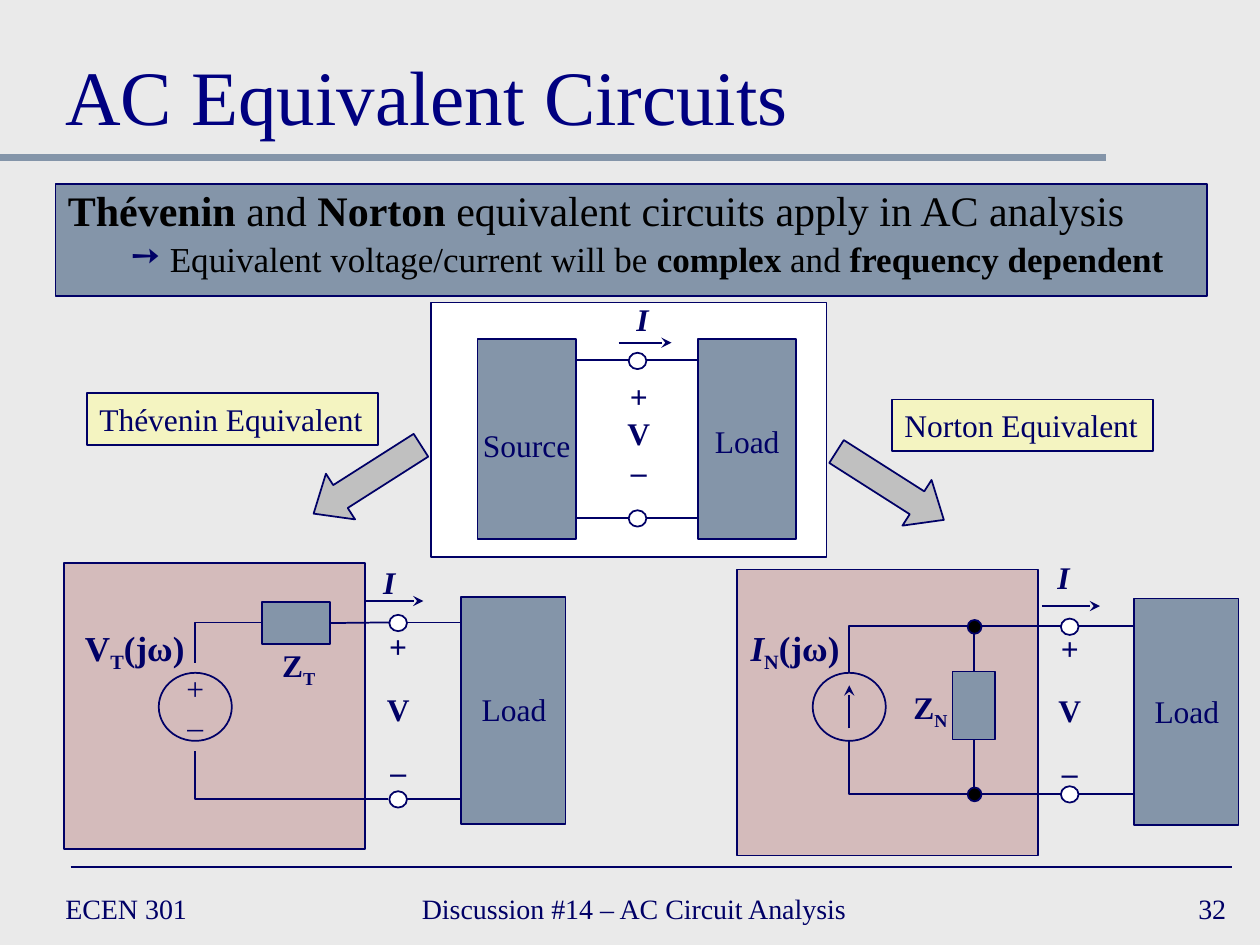
from lxml.etree import SubElement
from pptx import Presentation
from pptx.dml.color import RGBColor
from pptx.enum.shapes import MSO_CONNECTOR, MSO_SHAPE
from pptx.enum.text import MSO_ANCHOR, PP_ALIGN
from pptx.oxml.ns import qn
from pptx.util import Emu, Pt

PX = 9144
FONT = "Times New Roman"
NAVY = RGBColor(0x00, 0x00, 0x66)
TITLE_BLUE = RGBColor(0x00, 0x00, 0x80)
SLATE = RGBColor(0x84, 0x95, 0xA9)
MAROON = RGBColor(0x80, 0x00, 0x00)
YELLOW = RGBColor(0xFF, 0xFF, 0x99)
SILVER = RGBColor(0xC0, 0xC0, 0xC0)
PAPER = RGBColor(0xEA, 0xEA, 0xEA)
WHITE = RGBColor(0xFF, 0xFF, 0xFF)
BLACK = RGBColor(0x00, 0x00, 0x00)


def px(*values):
    return [Emu(value * PX) for value in values]


def write(paragraph, runs, size, color=NAVY, align=PP_ALIGN.LEFT):
    paragraph.alignment = align
    paragraph.font.name = FONT
    paragraph.font.size = Pt(size)
    paragraph.font.color.rgb = color
    all_bold = all("b" in style for _, style in runs)
    if all_bold:
        paragraph.font.bold = True
    for text, style in runs:
        run = paragraph.add_run()
        run.text = text
        if "b" in style and not all_bold:
            run.font.bold = True
        if "i" in style:
            run.font.italic = True
        if "s" in style:
            run.font._element.set("baseline", "-25000")


def add_text(slide, box, runs, size, color=NAVY, align=PP_ALIGN.LEFT, anchor=MSO_ANCHOR.MIDDLE):
    frame = slide.shapes.add_textbox(*px(*box)).text_frame
    frame.word_wrap = True
    frame.vertical_anchor = anchor
    write(frame.paragraphs[0], runs, size, color, align)


def add_label(slide, box, lines, size=18, gap=0):
    frame = slide.shapes.add_textbox(*px(*box)).text_frame
    frame.word_wrap = False
    for index, runs in enumerate(lines):
        paragraph = frame.add_paragraph() if index else frame.paragraphs[0]
        if index and gap:
            paragraph.space_before = Pt(gap)
        write(paragraph, runs, size, align=PP_ALIGN.CENTER)


def add_shape(slide, box, fill=None, kind=MSO_SHAPE.RECTANGLE, alpha=None, width=1):
    shape = slide.shapes.add_shape(kind, *px(*box))
    shape.shadow.inherit = False
    shape.line.color.rgb = NAVY
    shape.line.width = Pt(width)
    if fill is None:
        shape.fill.background()
        return shape
    shape.fill.solid()
    shape.fill.fore_color.rgb = fill
    if alpha:
        color = shape._element.spPr.find(qn("a:solidFill"))[0]
        SubElement(color, qn("a:alpha")).set("val", str(alpha * 1000))
    return shape


def add_wire(slide, start, end, color=NAVY, width=1, arrow=False, corner=False):
    wire = slide.shapes.add_connector(MSO_CONNECTOR.STRAIGHT, *px(*start, *end))
    wire.line.color.rgb = color
    wire.line.width = Pt(width)
    properties = wire._element.spPr
    if corner:
        properties.find(qn("a:prstGeom")).set("prst", "bentConnector2")
    if arrow:
        SubElement(properties.find(qn("a:ln")), qn("a:tailEnd")).set("type", "stealth")
    SubElement(properties, qn("a:effectLst"))
    return wire


def add_dot(slide, center_x, center_y, diameter, fill):
    corner = center_x - diameter // 2, center_y - diameter // 2
    add_shape(slide, (*corner, diameter, diameter), fill, MSO_SHAPE.OVAL)


def add_terminals(slide, center_x, rails, load_left):
    for y in rails:
        add_wire(slide, (center_x + 7, y), (load_left, y))
        add_shape(slide, (center_x - 7, y - 6, 14, 13), WHITE, MSO_SHAPE.OVAL)


def add_current(slide, left, y, length, label_left, label_top):
    add_wire(slide, (left, y), (left + length, y), arrow=True)
    add_label(slide, (label_left, label_top, 30, 40), [[("I", "bi")]])


def add_voltage(slide, box, gap=0):
    add_label(slide, box, [[(mark, "b")] for mark in "+V–"], gap=gap)


def add_load(slide, left, top):
    add_shape(slide, (left, top, 83, 180), SLATE)
    add_label(slide, (left + 6, top + 69, 72, 40), [[("Load", "")]])


def add_frame(slide):
    add_wire(slide, (0, 125), (878, 125), SLATE, 4)
    add_wire(slide, (56, 688), (978, 688))
    add_text(slide, (42, 17, 917, 100), [("AC Equivalent Circuits", "")], 44, TITLE_BLUE,
             anchor=MSO_ANCHOR.BOTTOM)
    add_text(slide, (42, 700, 217, 42), [("ECEN 301", "")], 16)
    add_text(slide, (325, 700, 383, 42), [("Discussion #14 – AC Circuit Analysis", "")], 16)
    add_text(slide, (775, 700, 208, 42), [("32", "")], 16, align=PP_ALIGN.RIGHT)


def add_statement(slide, box):
    frame = add_shape(slide, box, SLATE, width=0.75).text_frame
    frame.word_wrap = True
    frame.vertical_anchor = MSO_ANCHOR.TOP
    claim, detail = frame.paragraphs[0], frame.add_paragraph()
    claim.line_spacing = detail.line_spacing = 0.9
    write(claim, [("Thévenin", "b"), (" and ", ""), ("Norton", "b"),
                  (" equivalent circuits apply in AC analysis", "")], 24, BLACK)
    detail.space_before = Pt(4)
    detail.level = 1
    properties = detail._p.get_or_add_pPr()
    properties.set("marL", str(81 * PX))
    properties.set("indent", str(-31 * PX))
    bullet_color = SubElement(properties, qn("a:buClr"))
    SubElement(bullet_color, qn("a:srgbClr")).set("val", str(NAVY))
    SubElement(properties, qn("a:buChar")).set("char", "➙")
    write(detail, [("Equivalent voltage/current will be ", ""), ("complex", "b"),
                   (" and ", ""), ("frequency dependent", "b")], 20, BLACK)


def add_source_and_load(slide, left, top, width, height):
    add_shape(slide, (left, top, width, height), WHITE)
    for offset in (37, 212):
        add_shape(slide, (left + offset, top + 29, 78, 159), SLATE)
    rails = top + 46, top + 171
    for y in rails:
        add_wire(slide, (left + 157, y), (left + 115, y))
    add_terminals(slide, left + 164, rails, left + 211)
    add_label(slide, (left + 31, top + 93, 90, 40), [[("Source", "")]])
    add_label(slide, (left + 215, top + 90, 72, 40), [[("Load", "")]])
    add_voltage(slide, (left + 146, top + 54, 38, 100))
    add_current(slide, left + 149, top + 32, 42, left + 153, top - 7)


def add_thevenin(slide, left, top, width, height):
    add_shape(slide, (left, top, width, height), MAROON, alpha=20)
    add_label(slide, (left + 6, top + 45, 100, 43), [[("V", "b"), ("T", "bs"), ("(jω)", "b")]], 20)
    add_shape(slide, (left + 75, top + 87, 58, 54), kind=MSO_SHAPE.OVAL)
    add_label(slide, (left + 87, top + 79, 34, 70), [[("+", "")], [("–", "")]])
    rails = upper, lower = top + 47, top + 187
    add_wire(slide, (left + 257, lower), (left + 104, top + 149), corner=True)
    add_wire(slide, (left + 157, upper), (left + 104, top + 79), corner=True)
    impedance = add_shape(slide, (left + 157, top + 31, 54, 33), SLATE)
    add_wire(slide, (left + 258, upper), (left + 211, upper)).end_connect(impedance, 3)
    add_label(slide, (left + 162, top + 61, 48, 40), [[("Z", "b"), ("T", "bs")]])
    add_terminals(slide, left + 265, rails, left + 315)
    add_load(slide, left + 315, top + 27)
    add_voltage(slide, (left + 246, top + 46, 38, 140), gap=14)
    add_current(slide, left + width, top + 30, 46, left + 243, top - 5)


def add_norton(slide, left, top, width, height):
    add_shape(slide, (left, top, width, height), MAROON, alpha=20)
    add_label(slide, (left, top + 40, 92, 43), [[("I", "bi"), ("N", "bs"), ("(jω)", "b")]], 20)
    add_shape(slide, (left + 60, top + 82, 58, 54), kind=MSO_SHAPE.OVAL)
    add_wire(slide, (left + 89, top + 126), (left + 89, top + 92), arrow=True)
    rails = upper, lower = top + 45, top + 178
    impedance = add_shape(slide, (left + 171, top + 81, 34, 54), SLATE)
    for y, source_y, impedance_y, site in ((upper, top + 82, top + 81, 0),
                                           (lower, top + 136, top + 135, 2)):
        add_wire(slide, (left + 188, y), (left + 89, source_y), corner=True)
        add_wire(slide, (left + 188, y), (left + 188, impedance_y)).end_connect(impedance, site)
        add_wire(slide, (left + 188, y), (left + 257, y))
        add_dot(slide, left + 188, y, 11, BLACK)
    add_label(slide, (left + 129, top + 89, 49, 40), [[("Z", "b"), ("N", "bs")]])
    add_terminals(slide, left + 264, rails, left + 315)
    add_load(slide, left + 315, top + 23)
    add_voltage(slide, (left + 245, top + 42, 38, 140), gap=14)
    add_current(slide, left + 242, top + 29, 46, left + 244, top - 14)


def add_pointer(slide, arrow_box, rotation, caption_box, caption):
    arrow = add_shape(slide, arrow_box, SILVER, MSO_SHAPE.RIGHT_ARROW)
    arrow.adjustments[0] = 0.5
    arrow.adjustments[1] = 0.587
    arrow.rotation = rotation
    frame = add_shape(slide, caption_box, YELLOW, alpha=50).text_frame
    frame.word_wrap = False
    write(frame.paragraphs[0], [(caption, "")], 18)


def main():
    presentation = Presentation()
    presentation.slide_width, presentation.slide_height = px(1000, 750)
    slide = presentation.slides.add_slide(presentation.slide_layouts[6])
    slide.background.fill.solid()
    slide.background.fill.fore_color.rgb = PAPER
    add_frame(slide)
    add_statement(slide, (44, 146, 914, 89))
    add_source_and_load(slide, 342, 240, 314, 202)
    add_thevenin(slide, 51, 447, 239, 227)
    add_norton(slide, 585, 452, 239, 227)
    add_pointer(slide, (656, 364, 101, 43), 32.5, (708, 317, 207, 41), "Norton Equivalent")
    add_pointer(slide, (241, 359, 101, 43), 147.5, (69, 312, 231, 41), "Thévenin Equivalent")
    presentation.save("out.pptx")


if __name__ == "__main__":
    main()
